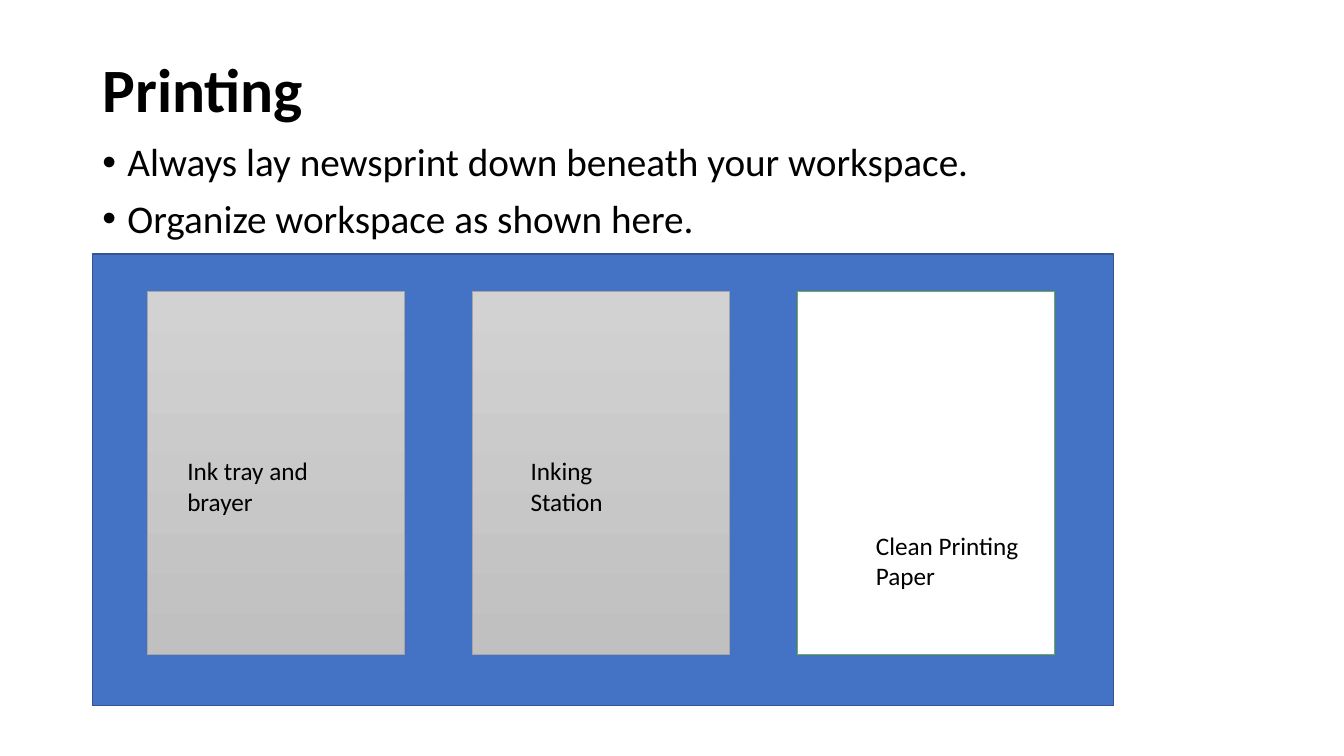
from dataclasses import dataclass

from lxml import etree
from pptx import Presentation
from pptx.dml.color import RGBColor
from pptx.enum import shapes, text
from pptx.oxml import ns
from pptx.util import Pt


@dataclass(frozen=True)
class Theme:
    font: str = "Calibri"
    ink: str = "000000"
    mat: str = "4472C4"
    edge: str = "325491"
    paper: str = "FFFFFF"
    trim: str = "70AD47"
    tray: tuple = ("D2D2D2", "C0C0C0")
    rim: str = "A5A5A5"
    title: int = 44
    body: int = 28
    label: int = 18


THEME = Theme()


def style(para, size, bold=False):
    para.alignment = text.PP_ALIGN.LEFT
    for run in para.runs:
        run.font.name = THEME.font
        run.font.size = Pt(size)
        run.font.bold = bold
        run.font.color.rgb = RGBColor.from_string(THEME.ink)


def add_title(slide, box, words):
    title = slide.shapes.title
    title.left, title.top, title.width, title.height = map(Pt, box)
    frame = title.text_frame
    frame.text = words
    frame.vertical_anchor = text.MSO_ANCHOR.MIDDLE
    frame.paragraphs[0].line_spacing = 0.9
    style(frame.paragraphs[0], THEME.title, True)


def add_list(slide, box, items):
    frame = slide.shapes.add_textbox(*map(Pt, box)).text_frame
    frame.word_wrap = True
    for index, item in enumerate(items):
        para = frame.add_paragraph() if index else frame.paragraphs[0]
        para.text = item
        para.line_spacing = 0.9
        if index:
            para.space_before = Pt(10)
        props = para._p.get_or_add_pPr()
        props.set("marL", str(Pt(18)))
        props.set("indent", str(Pt(-18)))
        font = etree.SubElement(props, ns.qn("a:buFont"))
        font.set("typeface", "Arial")
        etree.SubElement(props, ns.qn("a:buChar")).set("char", "•")
        style(para, THEME.body)


def add_rect(slide, box, fills, line, weight):
    rect = slide.shapes.add_shape(shapes.MSO_SHAPE.RECTANGLE, *map(Pt, box))
    rect.shadow.inherit = False
    if len(fills) > 1:
        rect.fill.gradient()
        rect.fill.gradient_angle = 270
        for stop, color in zip(rect.fill.gradient_stops, fills):
            stop.color.rgb = RGBColor.from_string(color)
    else:
        rect.fill.solid()
        rect.fill.fore_color.rgb = RGBColor.from_string(fills[0])
    rect.line.color.rgb = RGBColor.from_string(line)
    rect.line.width = Pt(weight)


def add_label(slide, box, words):
    frame = slide.shapes.add_textbox(*map(Pt, box)).text_frame
    frame.word_wrap = True
    frame.text = words
    style(frame.paragraphs[0], THEME.label)


def add_bench(slide, box):
    left, top, width, height = box
    add_rect(slide, box, (THEME.mat,), THEME.edge, 1)
    tray = (THEME.tray, THEME.rim, 0.5)
    paper = ((THEME.paper,), THEME.trim, 1)
    stations = (
        ("Ink tray and brayer", tray, 21.5, 113.5, 136),
        ("Inking Station", tray, 34.5, 113.5, 105),
        ("Clean Printing Paper", paper, 49, 167, 121),
    )
    for index, (words, look, inset, drop, span) in enumerate(stations):
        x, y = left + 39 + index * 232.2, top + 27
        add_rect(slide, (x, y, 183.6, 259.2), *look)
        add_label(slide, (x + inset, y + drop, span, 51), words)


def main():
    deck = Presentation()
    deck.slide_width, deck.slide_height = Pt(960), Pt(540)
    slide = deck.slides.add_slide(deck.slide_layouts[5])
    add_title(slide, (66, 13.7, 828, 104.4), "Printing")
    add_list(slide, (66, 98.6, 828, 80), (
        "Always lay newsprint down beneath your workspace.",
        "Organize workspace as shown here.",
    ))
    add_bench(slide, (66.2, 181.4, 729.4, 322.6))
    deck.save("out.pptx")


if __name__ == "__main__":
    main()
